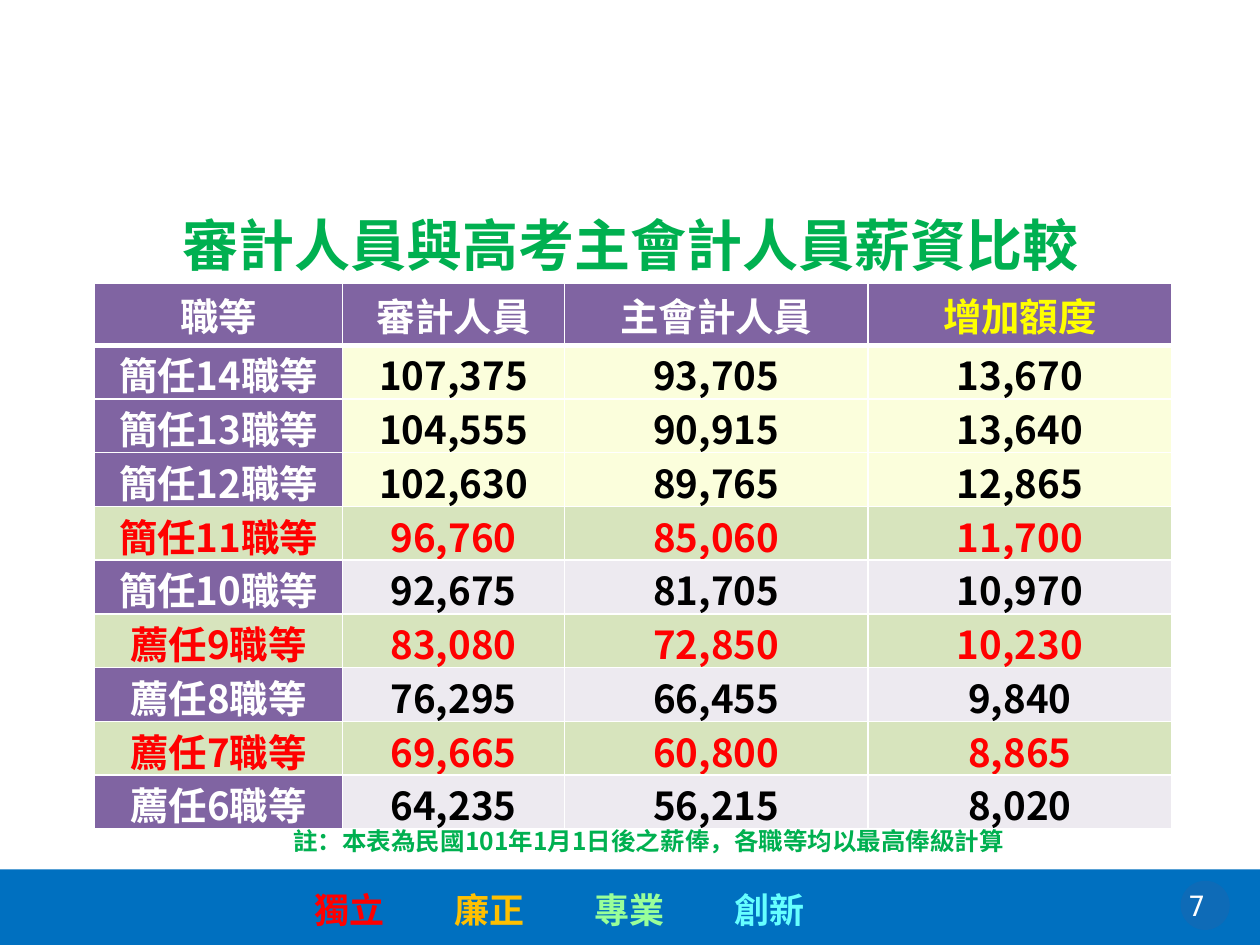
import pptx
import pptx.util
import pptx.oxml
import pptx.oxml.ns
import pptx.dml.color
import pptx.enum.shapes
import pptx.enum.text
from lxml import etree

Inches, Pt = pptx.util.Inches, pptx.util.Pt
ALIGN = pptx.enum.text.PP_ALIGN
MID = pptx.enum.text.MSO_ANCHOR.MIDDLE
SHAPE = pptx.enum.shapes.MSO_SHAPE
qn = pptx.oxml.ns.qn

# Content
TITLE = "審計人員與高考主會計人員薪資比較"
NOTE = "註：本表為民國101年1月1日後之薪俸，各職等均以最高俸級計算"
MOTTO = [("獨立", "red"), ("廉正", "gold"), ("專業", "mint"), ("創新", "aqua")]
HEAD = ["職等", "審計人員", "主會計人員", "增加額度"]
# grade, audit pay, accounting pay, row style
PAY = [
    ("簡任14職等", 107375, 93705, "high"),
    ("簡任13職等", 104555, 90915, "high"),
    ("簡任12職等", 102630, 89765, "high"),
    ("簡任11職等", 96760, 85060, "mark"),
    ("簡任10職等", 92675, 81705, "plain"),
    ("薦任9職等", 83080, 72850, "mark"),
    ("薦任8職等", 76295, 66455, "plain"),
    ("薦任7職等", 69665, 60800, "mark"),
    ("薦任6職等", 64235, 56215, "plain"),
]

# Format
COLOR = {
    "white": "FFFFFF", "black": "000000", "red": "FF0000", "gold": "FFC000",
    "mint": "99FF99", "aqua": "66FFFF", "yellow": "FFFF00", "green": "00B050",
    "blue": "0070C0", "disc": "2A62A8", "purple": "8064A2", "cream": "FBFEDC",
    "lime": "D7E4BD", "lilac": "EDEAF0",
}
# grade fill, grade text, pay fill, pay text
STYLE = {
    "high": ("purple", "white", "cream", "black"),
    "mark": ("lime", "red", "lime", "red"),
    "plain": ("purple", "white", "lilac", "black"),
}
JP, SC, MONO = "Noto Sans CJK JP", "Noto Sans CJK SC", "DejaVu Sans Mono"
COLS = [1.97, 1.76, 2.41, 2.41]
TOP, TALL, HEAD_H = 2.25, 4.33, 0.49
ROW_H = (TALL - HEAD_H) / len(PAY)
STEP = 1.11
CELL = {
    "margin_left": Inches(0.01), "margin_right": Inches(0.01),
    "margin_top": Inches(0.01), "margin_bottom": 0, "vertical_anchor": MID,
}


def rgb(name):
    return pptx.dml.color.RGBColor.from_string(COLOR[name])


def put(obj, vals):
    for key, val in vals.items():
        setattr(obj, key, val)


def paint(obj, name):
    obj.fill.solid()
    obj.fill.fore_color.rgb = rgb(name)


def add_run(para, text, size, face, color, bold=True):
    run = para.add_run()
    run.text = text
    put(run.font, {"size": Pt(size), "name": face, "bold": bold})
    run.font.color.rgb = rgb(color)
    props = run.font._element
    etree.SubElement(props, qn("a:ea")).set("typeface", face)


def add_box(slide, left, top, wide, high, align):
    box = slide.shapes.add_textbox(*map(Inches, (left, top, wide, high)))
    box.text_frame.word_wrap = True
    para = box.text_frame.paragraphs[0]
    para.alignment = align
    return box.text_frame, para


def add_solid(slide, kind, left, top, wide, high, color):
    shape = slide.shapes.add_shape(kind, *map(Inches, (left, top, wide, high)))
    shape.shadow.inherit = False
    paint(shape, color)
    shape.line.fill.background()
    return shape


def add_edges(cell, row):
    props = cell._tc.get_or_add_tcPr()
    thick = {"T": row == 1, "B": row == 0}
    for spot, side in enumerate("LRTB"):
        line = etree.Element(qn("a:ln" + side))
        line.set("w", str(Pt(3 if thick.get(side) else 1)))
        fill = etree.SubElement(line, qn("a:solidFill"))
        etree.SubElement(fill, qn("a:srgbClr")).set("val", COLOR["white"])
        props.insert(spot, line)


def fill_cell(cell, row, text, fill, color):
    put(cell, CELL)
    paint(cell, fill)
    add_edges(cell, row)
    para = cell.text_frame.paragraphs[0]
    para.alignment = ALIGN.CENTER
    add_run(para, text, 22, JP, color)


def add_footer(slide):
    add_solid(slide, SHAPE.RECTANGLE, 0, 6.9, 10, 0.6, "blue")
    disc = add_solid(slide, SHAPE.OVAL, 9.37, 6.99, 0.39, 0.39, "disc")
    tint = disc._element.spPr.find(".//" + qn("a:srgbClr"))
    etree.SubElement(tint, qn("a:alpha")).set("val", "35000")
    _, para = add_box(slide, 9.21, 7, 0.71, 0.37, ALIGN.CENTER)
    add_run(para, "7 ", 16, MONO, "white", False)

    # Motto words on even tab stops
    frame, para = add_box(slide, 2.5, 7, STEP * len(MOTTO), 0.44, ALIGN.LEFT)
    put(frame, {"margin_left": 0, "margin_right": 0})
    tabs = etree.SubElement(para._p.get_or_add_pPr(), qn("a:tabLst"))
    for num, (word, color) in enumerate(MOTTO):
        if num:
            tab = etree.SubElement(tabs, qn("a:tab"))
            tab.set("pos", str(Inches(STEP * num)))
            tab.set("algn", "l")
        add_run(para, "\t" * (num > 0) + word, 20, SC, color)


def add_title(slide):
    title = slide.shapes.title
    put(title, {"left": Inches(0.01), "top": Inches(1.31),
                "width": Inches(10), "height": Inches(1.25)})
    title.text_frame.vertical_anchor = MID
    para = title.text_frame.paragraphs[0]
    para.alignment = ALIGN.CENTER
    add_run(para, TITLE, 32, JP, "green")


def add_pay(slide):
    grid = slide.shapes.add_table(
        len(PAY) + 1, len(COLS), Inches(0.75), Inches(TOP),
        Inches(sum(COLS)), Inches(TALL)).table
    for col, wide in zip(grid.columns, COLS):
        col.width = Inches(wide)
    for num, row in enumerate(grid.rows):
        row.height = Inches(ROW_H if num else HEAD_H)
    for col, text in enumerate(HEAD):
        color = "yellow" if col == len(HEAD) - 1 else "white"
        fill_cell(grid.cell(0, col), 0, text, "purple", color)
    for num, (grade, audit, book, style) in enumerate(PAY, 1):
        texts = [grade] + [f"{pay:,}" for pay in (audit, book, audit - book)]
        for col, text in enumerate(texts):
            look = STYLE[style][2:] if col else STYLE[style][:2]
            fill_cell(grid.cell(num, col), num, text, *look)


def main():
    deck = pptx.Presentation()
    put(deck, {"slide_width": Inches(10), "slide_height": Inches(7.5)})
    slide = deck.slides.add_slide(deck.slide_layouts[5])
    add_footer(slide)
    add_title(slide)
    # Note under the table
    _, para = add_box(slide, 0.46, 6.51, 9.38, 0.34, ALIGN.CENTER)
    put(para._p.get_or_add_pPr(), {"marL": Inches(0.79), "indent": -Inches(0.79)})
    add_run(para, NOTE, 14, JP, "green")
    add_pay(slide)
    deck.save("out.pptx")


if __name__ == "__main__":
    main()
